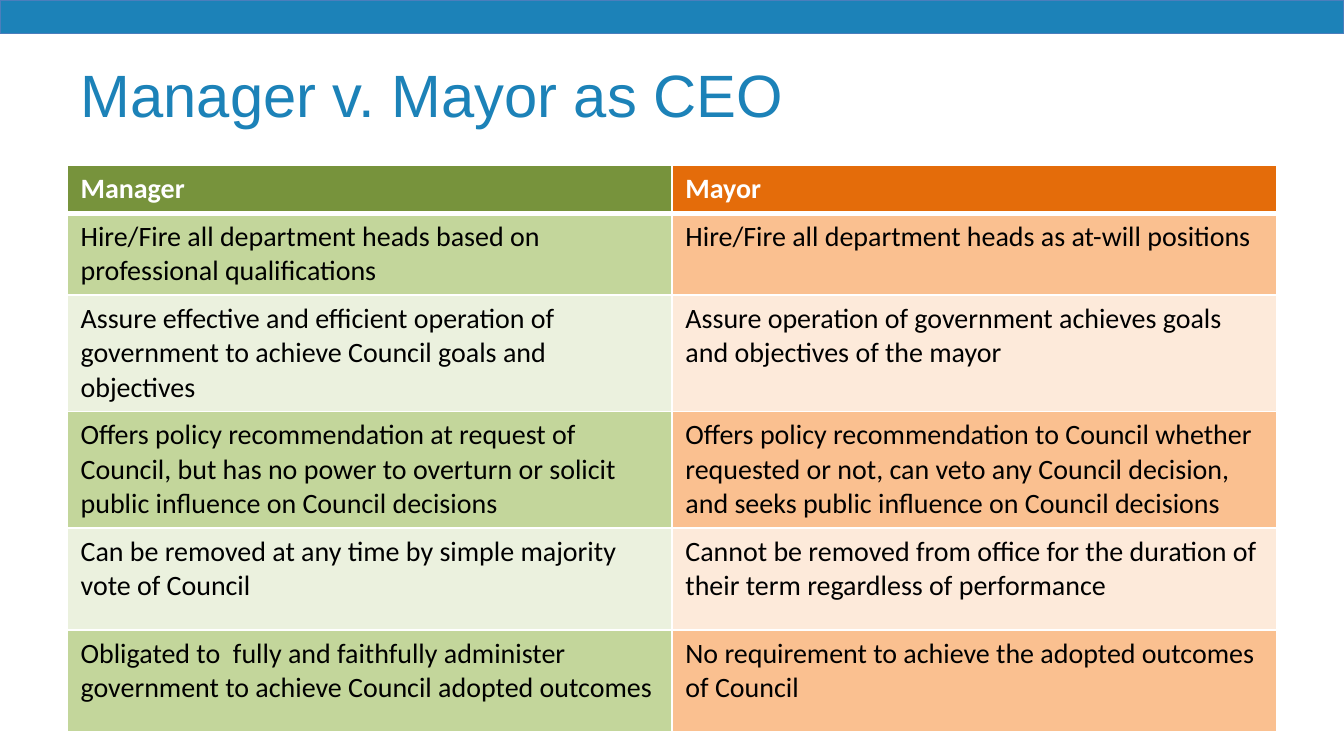
"""Build a slide comparing a manager and a mayor as chief executive."""
from dataclasses import dataclass

from lxml.etree import SubElement
from pptx import Presentation
from pptx.dml.color import RGBColor
from pptx.enum.shapes import MSO_SHAPE as Shape
from pptx.enum.text import MSO_ANCHOR as Anchor, PP_ALIGN as Align
from pptx.oxml.ns import qn
from pptx.slide import Slide
from pptx.table import _Cell as Cell
from pptx.util import Inches, Pt

WIDTH = Inches(10)
HEIGHT = WIDTH * 9 // 16
MARGIN = 0.05
COLORS = {
    "blue": "1C82B8", "blue_edge": "4B7EBC", "white": "FFFFFF", "black": "000000",
    "green": "77933C", "green_mid": "C3D69B", "green_pale": "EBF1DE",
    "orange": "E46C0A", "orange_mid": "FAC090", "orange_pale": "FDEADA",
}
ROW_HEIGHTS = (0.31, 0.54, 0.76, 0.76, 0.76, 0.76)


@dataclass(frozen=True)
class Role:
    name: str
    hue: str
    duties: tuple[str, ...]


ROLES = (
    Role("Manager", "green", (
        "Hire/Fire all department heads based on professional qualifications",
        "Assure effective and efficient operation of government to achieve Council goals and objectives",
        "Offers policy recommendation at request of Council, but has no power to overturn or solicit "
        "public influence on Council decisions",
        "Can be removed at any time by simple majority vote of Council",
        "Obligated to  fully and faithfully administer government to achieve Council adopted outcomes",
    )),
    Role("Mayor", "orange", (
        "Hire/Fire all department heads as at-will positions",
        "Assure operation of government achieves goals and objectives of the mayor",
        "Offers policy recommendation to Council whether requested or not, can veto any Council "
        "decision, and seeks public influence on Council decisions",
        "Cannot be removed from office for the duration of their term regardless of performance",
        "No requirement to achieve the adopted outcomes of Council",
    )),
)


def color(key: str) -> RGBColor:
    return RGBColor.from_string(COLORS[key])


def add_banner(slide: Slide) -> None:
    banner = slide.shapes.add_shape(Shape.RECTANGLE, 0, 0, WIDTH, Inches(0.25))
    banner.shadow.inherit = False
    banner.fill.solid()
    banner.fill.fore_color.rgb = color("blue")
    banner.line.color.rgb = color("blue_edge")
    banner.line.width = Pt(0.75)


def set_title(slide: Slide, wording: str) -> None:
    title = slide.shapes.title
    title.left, title.top = int(WIDTH * MARGIN), Inches(0.23)
    title.width, title.height = int(WIDTH * (1 - 2 * MARGIN)), Inches(0.94)
    title.text_frame.text = wording
    title.text_frame.vertical_anchor = Anchor.MIDDLE
    heading = title.text_frame.paragraphs[0]
    heading.alignment = Align.LEFT
    font = heading.runs[0].font
    font.name, font.size = "Arial", Pt(32)
    font.color.rgb = color("blue")


def set_borders(cell: Cell, widths: dict[str, float]) -> None:
    properties = cell._tc.get_or_add_tcPr()
    for side, width in widths.items():
        edge = SubElement(properties, qn(f"a:ln{side}"), w=str(Pt(width)))
        SubElement(SubElement(edge, qn("a:solidFill")), qn("a:srgbClr"), val=COLORS["white"])


def fill_cell(cell: Cell, wording: str, row: int, hue: str) -> None:
    header = row == 0
    shade = hue if header else hue + ("_mid" if row % 2 else "_pale")
    set_borders(cell, {"L": 1, "R": 1, "T": 3 if row == 1 else 1, "B": 3 if header else 1})
    cell.fill.solid()
    cell.fill.fore_color.rgb = color(shade)
    cell.text_frame.text = wording
    font = cell.text_frame.paragraphs[0].runs[0].font
    font.name, font.size, font.bold = "Calibri", Pt(15), header
    font.color.rgb = color("white" if header else "black")


def add_comparison(slide: Slide, roles: tuple[Role, ...]) -> None:
    comparison = slide.shapes.add_table(
        len(ROW_HEIGHTS), len(roles), int(WIDTH * MARGIN), Inches(1.23),
        int(WIDTH * (1 - 2 * MARGIN)), Inches(sum(ROW_HEIGHTS))).table
    for row, height in zip(comparison.rows, ROW_HEIGHTS):
        row.height = Inches(height)
    for column, role in enumerate(roles):
        for row, wording in enumerate((role.name, *role.duties)):
            fill_cell(comparison.cell(row, column), wording, row, role.hue)


def main() -> None:
    deck = Presentation()
    deck.slide_width, deck.slide_height = WIDTH, HEIGHT
    slide = deck.slides.add_slide(deck.slide_layouts[5])
    add_banner(slide)
    set_title(slide, "Manager v. Mayor as CEO")
    add_comparison(slide, ROLES)
    deck.save("out.pptx")


if __name__ == "__main__":
    main()
